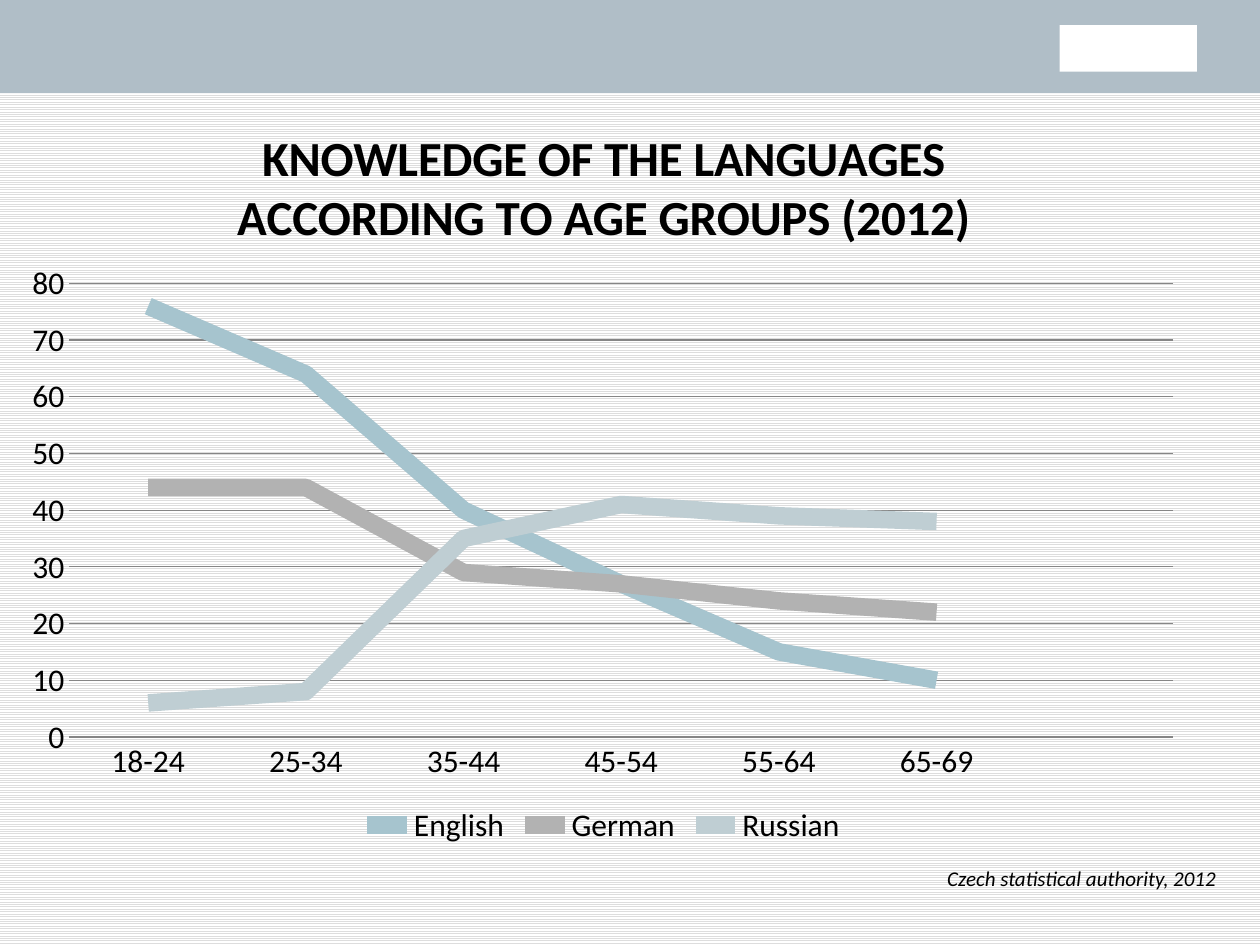
from dataclasses import dataclass

from lxml import etree
from pptx import Presentation
from pptx.chart.data import CategoryChartData
from pptx.dml.color import RGBColor
from pptx.enum.chart import XL_CHART_TYPE, XL_LEGEND_POSITION, XL_TICK_MARK
from pptx.enum.dml import MSO_PATTERN
from pptx.enum.shapes import MSO_SHAPE
from pptx.enum.text import MSO_ANCHOR, PP_ALIGN
from pptx.oxml.ns import qn
from pptx.util import Inches, Pt

LINE_CHART = XL_CHART_TYPE.LINE
LEGEND_BOTTOM = XL_LEGEND_POSITION.BOTTOM
NO_TICKS = XL_TICK_MARK.NONE
LIGHT_HORIZONTAL = MSO_PATTERN.LIGHT_HORIZONTAL
RECTANGLE = MSO_SHAPE.RECTANGLE
MIDDLE = MSO_ANCHOR.MIDDLE
CENTER = PP_ALIGN.CENTER


@dataclass(frozen=True)
class Theme:
    font: str = "Calibri"
    text: str = "000000"
    white: str = "FFFFFF"
    stripe: str = "DDDDDD"
    banner: str = "B0BEC7"
    grid: str = "868686"
    title_size: int = 28
    chart_size: int = 18
    source_size: int = 12
    series_width: int = 10


@dataclass(frozen=True)
class Language:
    name: str
    shares: tuple
    color: str


@dataclass(frozen=True)
class Box:
    left: float
    top: float
    width: float
    height: float

    def lengths(self) -> tuple:
        return tuple(Inches(value) for value in (self.left, self.top, self.width, self.height))


THEME = Theme()
TITLE = "KNOWLEDGE OF THE LANGUAGES ACCORDING TO AGE GROUPS (2012)"
# The last category is an empty slot at the right of the plot.
AGE_GROUPS = ("18-24", "25-34", "35-44", "45-54", "55-64", "65-69", "")
LANGUAGES = (
    Language("English", (76, 64, 40, 27, 15, 10, None), "A6C4CE"),
    Language("German", (44, 44, 29, 27, 24, 22, None), "B2B2B2"),
    Language("Russian", (6, 8, 35, 41, 39, 38, None), "BFCED3"),
)
PLOT_AREA = {"x": 0.05, "y": 0.25, "w": 0.93, "h": 0.6}


def rgb(color: str) -> RGBColor:
    return RGBColor.from_string(color)


def style_font(font, size: int, bold: bool = False, italic: bool = False) -> None:
    font.name = THEME.font
    font.size = Pt(size)
    font.bold = bold
    font.italic = italic
    font.color.rgb = rgb(THEME.text)


def paint_background(slide) -> None:
    fill = slide.background.fill
    fill.patterned()
    fill.pattern = LIGHT_HORIZONTAL
    fill.fore_color.rgb = rgb(THEME.stripe)
    fill.back_color.rgb = rgb(THEME.white)


def add_block(slide, box: Box, color: str) -> None:
    shape = slide.shapes.add_shape(RECTANGLE, *box.lengths())
    shape.shadow.inherit = False
    shape.fill.solid()
    shape.fill.fore_color.rgb = rgb(color)
    shape.line.fill.background()


def fix_plot_area(chart) -> None:
    """Place the inner plot area at fixed fractions of the chart."""
    plot_area = chart.plots[0]._element.getparent()
    for old_layout in plot_area.findall(qn("c:layout")):
        plot_area.remove(old_layout)
    layout = etree.Element(qn("c:layout"))
    manual = etree.SubElement(layout, qn("c:manualLayout"))
    settings = {"layoutTarget": "inner", "xMode": "edge", "yMode": "edge", **PLOT_AREA}
    for name, value in settings.items():
        etree.SubElement(manual, qn(f"c:{name}")).set("val", str(value))
    plot_area.insert(0, layout)


def add_language_chart(slide, box: Box) -> None:
    data = CategoryChartData()
    data.categories = AGE_GROUPS
    for language in LANGUAGES:
        data.add_series(language.name, language.shares)
    chart = slide.shapes.add_chart(LINE_CHART, *box.lengths(), data).chart
    style_font(chart.font, THEME.chart_size)

    chart.has_title = True
    title_frame = chart.chart_title.text_frame
    title_frame.text = TITLE
    style_font(title_frame.paragraphs[0].runs[0].font, THEME.title_size, bold=True)
    chart.chart_title.include_in_layout = False

    chart.has_legend = True
    chart.legend.position = LEGEND_BOTTOM
    chart.legend.include_in_layout = False

    for axis in (chart.category_axis, chart.value_axis):
        axis.major_tick_mark = NO_TICKS
        axis.minor_tick_mark = NO_TICKS
    chart.category_axis.format.line.color.rgb = rgb(THEME.grid)
    values = chart.value_axis
    values.minimum_scale, values.maximum_scale, values.major_unit = 0, 80, 10
    values.format.line.fill.background()
    values.has_major_gridlines = True
    values.major_gridlines.format.line.color.rgb = rgb(THEME.grid)

    plot = chart.plots[0]
    plot.vary_by_categories = False
    for series, language in zip(plot.series, LANGUAGES):
        series.smooth = False
        series.format.line.color.rgb = rgb(language.color)
        series.format.line.width = Pt(THEME.series_width)
    fix_plot_area(chart)


def add_source_note(slide, box: Box, text: str) -> None:
    text_frame = slide.shapes.add_textbox(*box.lengths()).text_frame
    text_frame.word_wrap = True
    text_frame.vertical_anchor = MIDDLE
    text_frame.text = text
    paragraph = text_frame.paragraphs[0]
    paragraph.alignment = CENTER
    style_font(paragraph.runs[0].font, THEME.source_size, italic=True)


def main() -> None:
    presentation = Presentation()
    presentation.slide_width = Inches(10)
    presentation.slide_height = Inches(7.5)
    slide = presentation.slides.add_slide(presentation.slide_layouts[6])

    paint_background(slide)
    add_block(slide, Box(0, 0, 10, 0.74), THEME.banner)
    add_block(slide, Box(8.41, 0.2, 1.09, 0.37), THEME.white)
    add_language_chart(slide, Box(0.08, 0.75, 9.42, 6))
    add_source_note(slide, Box(7.25, 6.82, 2.67, 0.3), "Czech statistical authority, 2012")
    presentation.save("out.pptx")


if __name__ == "__main__":
    main()
